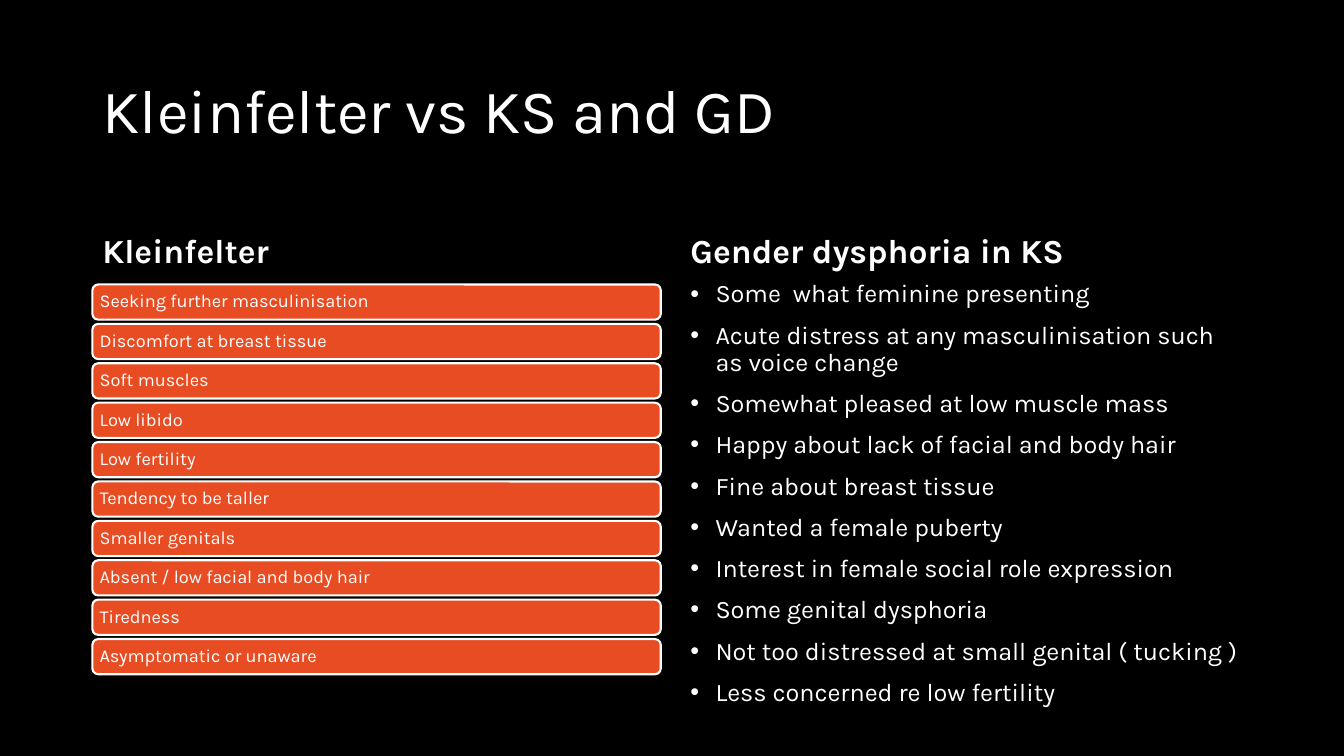
from lxml.etree import SubElement
from pptx import Presentation
from pptx.dml.color import RGBColor
from pptx.enum.shapes import MSO_SHAPE
from pptx.enum.text import MSO_ANCHOR, MSO_AUTO_SIZE, PP_ALIGN
from pptx.oxml.ns import qn
from pptx.util import Pt

BLACK = RGBColor(0x00, 0x00, 0x00)
WHITE = RGBColor(0xFF, 0xFF, 0xFF)
ORANGE = RGBColor(0xE8, 0x4C, 0x22)
FONT = "Karla"

KLEINFELTER = [
    "Seeking further masculinisation",
    "Discomfort at breast tissue",
    "Soft muscles",
    "Low libido",
    "Low fertility",
    "Tendency to be taller",
    "Smaller genitals",
    "Absent / low facial and body hair",
    "Tiredness",
    "Asymptomatic or unaware",
]
DYSPHORIA = [
    "Some  what feminine presenting",
    "Acute distress at any masculinisation such as voice change",
    "Somewhat pleased at low muscle mass",
    "Happy about lack of facial and body hair",
    "Fine about breast tissue",
    "Wanted a female puberty",
    "Interest in female social role expression",
    "Some genital dysphoria",
    "Not too distressed at small genital ( tucking )",
    "Less concerned re low fertility",
]


def set_frame(tf, anchor):
    tf.word_wrap = True
    tf.auto_size = MSO_AUTO_SIZE.NONE
    tf.vertical_anchor = anchor


def write(p, text, size, bold=False):
    p.text = text
    p.alignment = PP_ALIGN.LEFT
    p.line_spacing = 0.9
    for r in p.runs:
        r.font.name = FONT
        r.font.size = Pt(size)
        r.font.bold = bold
        r.font.color.rgb = WHITE


def add_title(s, text, left, top, width, height):
    sp = s.shapes.title
    sp.left, sp.top, sp.width, sp.height = Pt(left), Pt(top), Pt(width), Pt(height)
    set_frame(sp.text_frame, MSO_ANCHOR.MIDDLE)
    write(sp.text_frame.paragraphs[0], text, 44)


def add_heading(s, text, left, top, width, height):
    sp = s.shapes.add_textbox(Pt(left), Pt(top), Pt(width), Pt(height))
    set_frame(sp.text_frame, MSO_ANCHOR.BOTTOM)
    write(sp.text_frame.paragraphs[0], text, 24, bold=True)


def add_bars(s, items, left, top, width, height):
    gap = 3
    bar_height = (height - gap * (len(items) - 1)) / len(items)
    for i, item in enumerate(items):
        sp = s.shapes.add_shape(
            MSO_SHAPE.ROUNDED_RECTANGLE, Pt(left),
            Pt(top + i * (bar_height + gap)), Pt(width), Pt(bar_height))
        sp.shadow.inherit = False
        sp.fill.solid()
        sp.fill.fore_color.rgb = ORANGE
        sp.line.color.rgb = WHITE
        sp.line.width = Pt(1.5)
        tf = sp.text_frame
        set_frame(tf, MSO_ANCHOR.MIDDLE)
        tf.margin_left = tf.margin_right = Pt(3.9)
        tf.margin_top = tf.margin_bottom = Pt(3.9)
        write(tf.paragraphs[0], item, 13)


def add_bullets(s, items, left, top, width, height):
    sp = s.shapes.add_textbox(Pt(left), Pt(top), Pt(width), Pt(height))
    tf = sp.text_frame
    set_frame(tf, MSO_ANCHOR.TOP)
    for i, item in enumerate(items):
        p = tf.add_paragraph() if i else tf.paragraphs[0]
        write(p, item, 18)
        if i:
            p.space_before = Pt(10)
        pPr = p._p.get_or_add_pPr()
        pPr.set("marL", str(Pt(18)))
        pPr.set("indent", str(-Pt(18)))
        SubElement(pPr, qn("a:buFont")).set("typeface", "Arial")
        SubElement(pPr, qn("a:buChar")).set("char", "•")


def build_comparison(prs):
    s = prs.slides.add_slide(prs.slide_layouts[5])
    s.background.fill.solid()
    s.background.fill.fore_color.rgb = BLACK
    add_title(s, "Kleinfelter vs KS and GD", 66, 28.8, 828, 104.4)

    # Left column: symptom bars
    add_heading(s, "Kleinfelter", 66, 132.5, 406, 64.8)
    add_bars(s, KLEINFELTER, 66, 203.2, 406, 278.4)

    # Right column: bulleted list
    add_heading(s, "Gender dysphoria in KS", 486, 132.5, 408, 64.8)
    add_bullets(s, DYSPHORIA, 486, 197.3, 408, 290)


def main():
    prs = Presentation()
    prs.slide_width, prs.slide_height = Pt(960), Pt(540)
    build_comparison(prs)
    prs.save("out.pptx")


if __name__ == "__main__":
    main()
